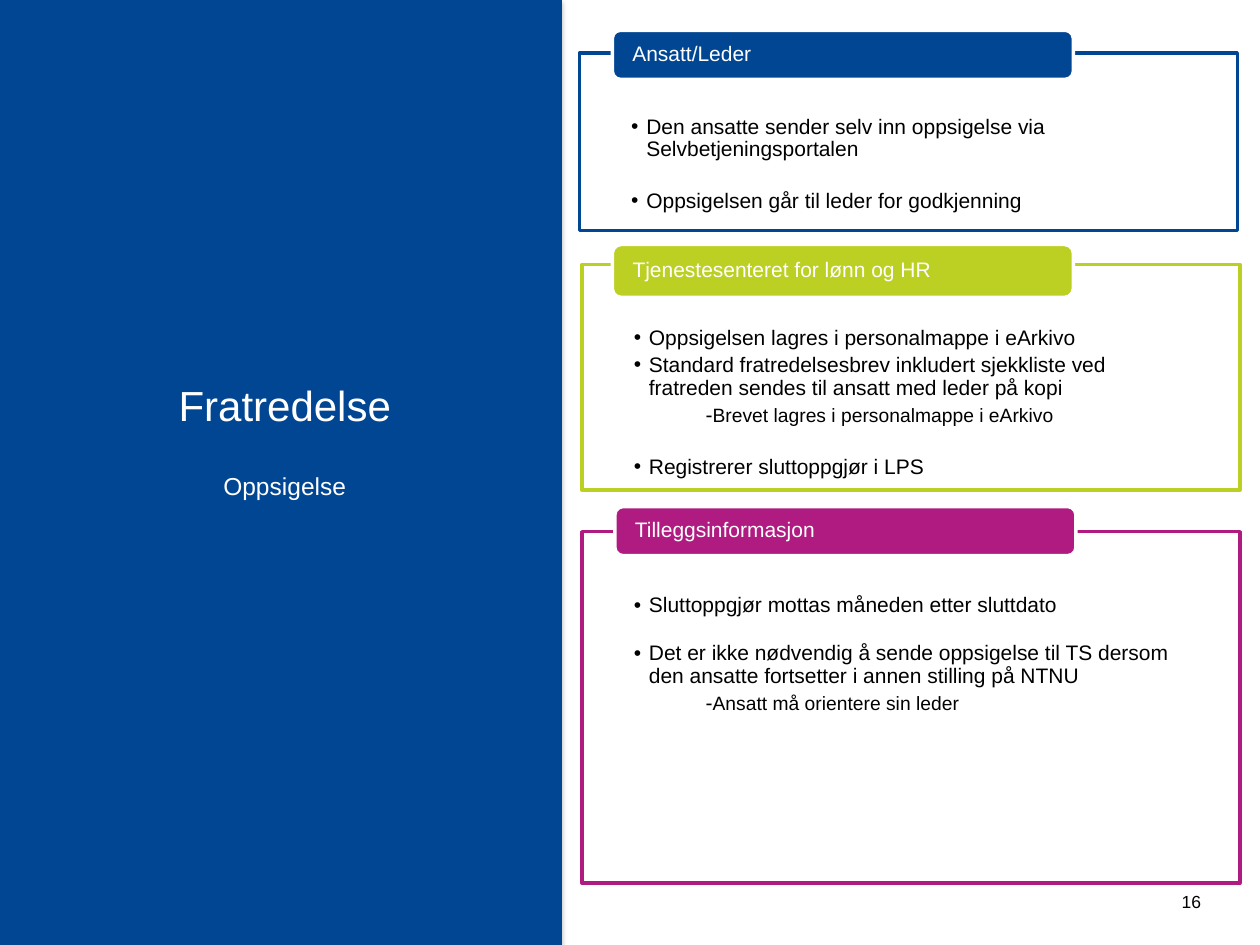
from lxml import etree
from pptx import Presentation
from pptx import util as u
from pptx.dml.color import RGBColor
from pptx.enum import shapes, text
from pptx.oxml.ns import qn

WIDTH, HEIGHT = u.Inches(10), u.Inches(7.5)
COLS, ROWS = 100, 75
FONT = "Arial"
BLUE = RGBColor(0x01, 0x46, 0x93)
LIME = RGBColor(0xBC, 0xD0, 0x24)
PURPLE = RGBColor(0xB0, 0x1B, 0x81)
WHITE = RGBColor(0xFF, 0xFF, 0xFF)
BLACK = RGBColor(0, 0, 0)

CARD_WIDTH, TAB_WIDTH = 52.2, 36.6
NEAR, FAR = 2.4, 16.8  # points before a paragraph

# heading, colour, frame (left, top, height), tab (left, top, height),
# paragraphs (kind, space before, text)
CARDS = [
    ("Ansatt/Leder", BLUE, (46, 4.2, 14.1), (48.6, 2.4, 3.9), [
        ("bullet", 0, "Den ansatte sender selv inn oppsigelse via Selvbetjeningsportalen"),
        ("bullet", FAR, "Oppsigelsen går til leder for godkjenning"),
    ]),
    ("Tjenestesenteret for lønn og HR", LIME, (46.2, 21, 17.9), (48.6, 19.4, 4.2), [
        ("bullet", 0, "Oppsigelsen lagres i personalmappe i eArkivo"),
        ("bullet", NEAR, "Standard fratredelsesbrev inkludert sjekkliste ved "
                         "fratreden sendes til ansatt med leder på kopi"),
        ("dash", NEAR, "Brevet lagres i personalmappe i eArkivo"),
        ("bullet", FAR, "Registrerer sluttoppgjør i LPS"),
    ]),
    ("Tilleggsinformasjon", PURPLE, (46.2, 42.2, 27.9), (48.8, 40.2, 3.9), [
        ("bullet", 0, "Sluttoppgjør mottas måneden etter sluttdato"),
        ("bullet", 14.5, "Det er ikke nødvendig å sende oppsigelse til TS dersom "
                         "den ansatte fortsetter i annen stilling på NTNU"),
        ("dash", NEAR, "Ansatt må orientere sin leder"),
    ]),
]


def cells(left, top, width, height):
    """Turn grid columns and rows into slide lengths."""
    return (int(WIDTH * left / COLS), int(HEIGHT * top / ROWS),
            int(WIDTH * width / COLS), int(HEIGHT * height / ROWS))


def set_attrs(obj, values):
    for name, value in values.items():
        setattr(obj, name, value)


def set_frame(sp, anchor, left=0.1, top=0.05):
    set_attrs(sp.text_frame, {
        "word_wrap": True, "auto_size": text.MSO_AUTO_SIZE.NONE,
        "vertical_anchor": anchor,
        "margin_left": u.Inches(left), "margin_right": u.Inches(left),
        "margin_top": u.Inches(top), "margin_bottom": u.Inches(0.05)})


def place(sp, box):
    """Move a placeholder to its cells and to the front."""
    set_attrs(sp, dict(zip(("left", "top", "width", "height"), cells(*box))))
    sp._element.getparent().append(sp._element)


def paint(sp, fill, line=None):
    sp.fill.solid()
    sp.fill.fore_color.rgb = fill
    if line is None:
        sp.line.fill.background()
    else:
        sp.line.color.rgb = line
        sp.line.width = u.Pt(2)


def add_run(p, words, size, color):
    r = p.add_run()
    r.text = words
    set_attrs(r.font, {"name": FONT, "size": u.Pt(size), "bold": False})
    r.font.color.rgb = color


def format_paragraph(p, align, before=0, spacing=1.0, bullet=None, margin=0, hanging=0):
    set_attrs(p, {"alignment": align, "space_before": u.Pt(before),
                  "space_after": u.Pt(0), "line_spacing": spacing})
    pPr = p._p.get_or_add_pPr()
    pPr.set("marL", str(u.Inches(margin)))
    pPr.set("indent", str(-u.Inches(hanging)))
    if bullet:
        etree.SubElement(pPr, qn("a:buFont")).set("typeface", FONT)
        etree.SubElement(pPr, qn("a:buChar")).set("char", bullet)
    else:
        etree.SubElement(pPr, qn("a:buNone"))


def fill_line(sp, words, size, color, align, spacing=1.0):
    p = sp.text_frame.paragraphs[0]
    format_paragraph(p, align, spacing=spacing)
    add_run(p, words, size, color)


def add_side_panel(slide):
    sp = slide.shapes.add_shape(shapes.MSO_SHAPE.RECTANGLE, *cells(-0.3, 0, 44.9, 75))
    paint(sp, BLUE)
    sp.shadow.inherit = False
    effects = sp._element.spPr.find(qn("a:effectLst"))
    shadow = etree.SubElement(effects, qn("a:outerShdw"), blurRad=str(u.Pt(3.1)),
                              dist=str(u.Pt(1.8)), dir="5400000", rotWithShape="0")
    color = etree.SubElement(shadow, qn("a:srgbClr"), val=str(BLACK))
    etree.SubElement(color, qn("a:alpha"), val="35000")


def fill_heading(sp, words, size, top, height):
    place(sp, (2.6, top, 40, height))
    set_frame(sp, text.MSO_ANCHOR.TOP)
    fill_line(sp, words, size, WHITE, text.PP_ALIGN.CENTER)


def fill_card(sp, color, frame, items):
    left, top, height = frame
    place(sp, (left, top, CARD_WIDTH, height))
    paint(sp, WHITE, color)
    set_frame(sp, text.MSO_ANCHOR.TOP, 0.41, 0.5)
    tf = sp.text_frame
    for i, (kind, before, words) in enumerate(items):
        p = tf.add_paragraph() if i else tf.paragraphs[0]
        if kind == "bullet":
            format_paragraph(p, text.PP_ALIGN.LEFT, before, 0.9, "•", 0.12, 0.12)
            add_run(p, words, 12, BLACK)
        else:
            format_paragraph(p, text.PP_ALIGN.LEFT, before, 0.9, margin=0.57)
            add_run(p, "-", 12, BLACK)
            add_run(p, words, 11, BLACK)


def add_tab(slide, words, color, box):
    left, top, height = box
    sp = slide.shapes.add_shape(shapes.MSO_SHAPE.ROUNDED_RECTANGLE,
                                *cells(left, top, TAB_WIDTH, height))
    sp.shadow.inherit = False
    paint(sp, color, WHITE)
    set_frame(sp, text.MSO_ANCHOR.MIDDLE, 0.14, 0.05)
    fill_line(sp, words, 12, WHITE, text.PP_ALIGN.LEFT, 0.9)


def add_page_number(slide, number):
    sp = slide.shapes.add_textbox(*cells(92.7, 70.2, 3.7, 4))
    set_frame(sp, text.MSO_ANCHOR.TOP, 0.05)
    fill_line(sp, number, 10, BLACK, text.PP_ALIGN.CENTER)


def main():
    prs = Presentation()
    set_attrs(prs, {"slide_width": WIDTH, "slide_height": HEIGHT})
    slide = prs.slides.add_slide(prs.slide_layouts.get_by_name("Comparison"))
    title, subtitle, *bodies = list(slide.placeholders)

    add_side_panel(slide)
    fill_heading(title, "Fratredelse", 24, 29.6, 5)
    fill_heading(subtitle, "Oppsigelse", 14, 36.9, 4)
    for body, (heading, color, frame, tab, items) in zip(bodies, CARDS):
        fill_card(body, color, frame, items)
        add_tab(slide, heading, color, tab)
    add_page_number(slide, "16")
    prs.save("out.pptx")


if __name__ == "__main__":
    main()
